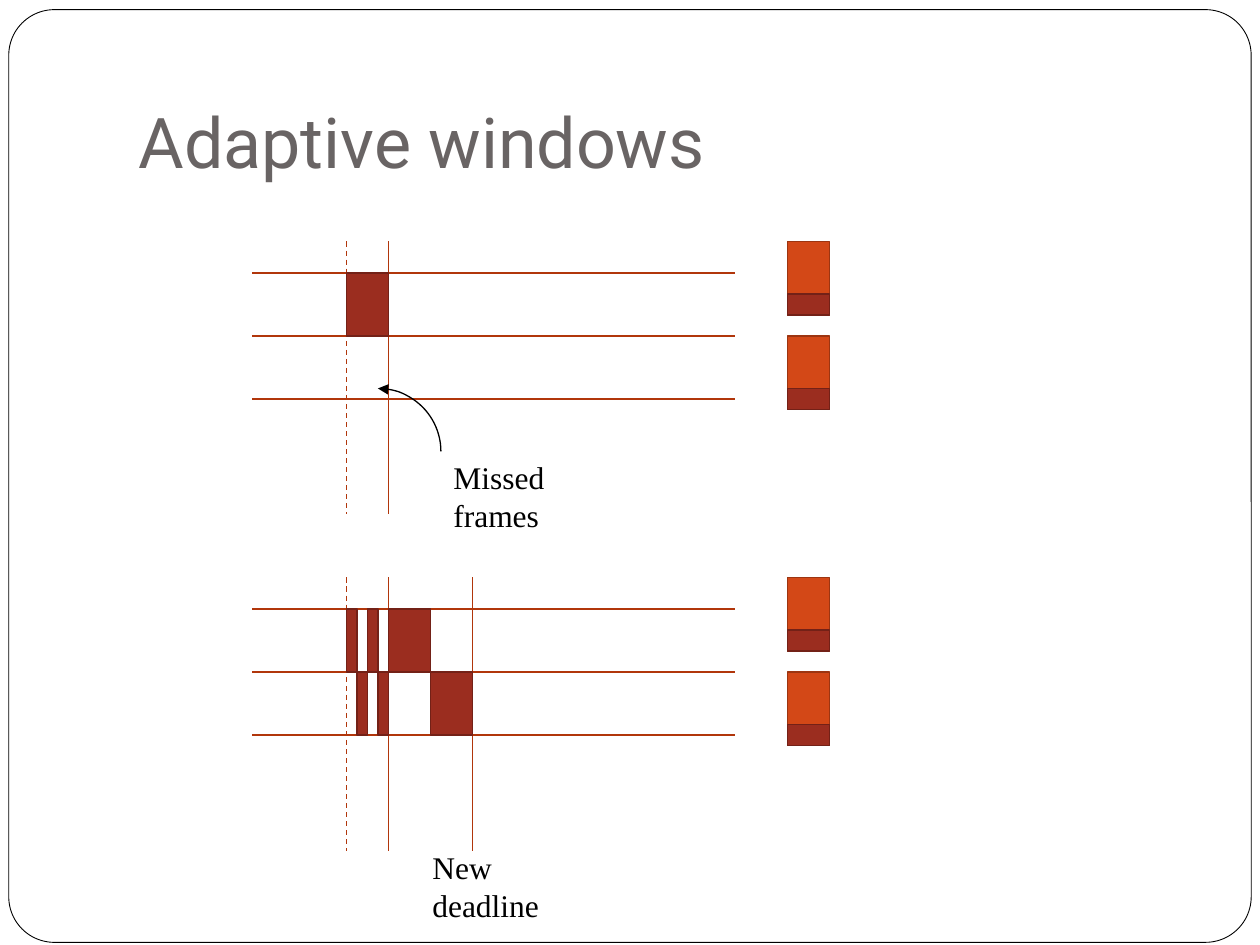
from lxml import etree
from pptx import Presentation
from pptx.dml.color import RGBColor
from pptx.enum import dml, shapes, text
from pptx.oxml import ns
from pptx.util import Pt

COLORS = {
    "white": "FFFFFF", "black": "000000", "title": "696464", "grid": "B1360B",
    "buffer": "D34817", "buffer_edge": "9C3511",
    "frame": "9B2D1F", "frame_edge": "732117",
}
ROW_TOPS = (18, 54, 90)
ROW_HEIGHT = 36
WINDOW_START, DEADLINE, NEW_DEADLINE = 54, 78, 126
PANEL_WIDTH, PANEL_HEIGHT = 276, 156


def color(name):
    return RGBColor.from_string(COLORS[name])


def style_line(shape, name, width):
    shape.line.color.rgb = color(name)
    shape.line.width = Pt(width)


def add_box(slide, left, top, width, height, fill, edge, edge_width=1,
            kind=shapes.MSO_SHAPE.RECTANGLE):
    box = slide.shapes.add_shape(kind, Pt(left), Pt(top), Pt(width), Pt(height))
    box.shadow.inherit = False
    box.fill.solid()
    box.fill.fore_color.rgb = color(fill)
    style_line(box, edge, edge_width)
    return box


def add_line(slide, x1, y1, x2, y2, dashed=False):
    line = slide.shapes.add_connector(
        shapes.MSO_CONNECTOR.STRAIGHT, Pt(x1), Pt(y1), Pt(x2), Pt(y2))
    style_line(line, "grid", 0.75)
    if dashed:
        line.line.dash_style = dml.MSO_LINE.DASH
    etree.SubElement(line._element.spPr, ns.qn("a:effectLst"))


def add_label(slide, left, top, width, words):
    label = slide.shapes.add_textbox(Pt(left), Pt(top), Pt(width), Pt(29))
    label.text_frame.word_wrap = True
    paragraph = label.text_frame.paragraphs[0]
    paragraph.text = words
    paragraph.font.name = "Times New Roman"
    paragraph.font.size = Pt(18)
    paragraph.font.color.rgb = color("black")


def add_border(slide):
    border = add_box(slide, 5, 5.5, 710, 533, "white", "black", 0.5,
                     shapes.MSO_SHAPE.ROUNDED_RECTANGLE)
    border.adjustments[0] = 0.049
    slide.shapes._spTree.insert(2, border._element)


def add_title(slide, left, top, width, height):
    title = slide.shapes.title
    title.left, title.top = Pt(left), Pt(top)
    title.width, title.height = Pt(width), Pt(height)
    frame = title.text_frame
    frame.vertical_anchor = text.MSO_ANCHOR.BOTTOM
    frame.margin_bottom = Pt(7.2)
    paragraph = frame.paragraphs[0]
    paragraph.text = "Adaptive windows"
    paragraph.alignment = text.PP_ALIGN.LEFT
    paragraph.font.name = "Roboto"
    paragraph.font.size = Pt(40)
    paragraph.font.color.rgb = color("title")


def add_buffers(slide, left, top):
    """Two stacked buffers, each with a filled part at its foot."""
    for y in (top, top + 54):
        add_box(slide, left, y, 24, 42, "buffer", "buffer_edge")
        add_box(slide, left, y + 30, 24, 12, "frame", "frame_edge")


def add_timeline(slide, left, top, deadlines, frames):
    """Two-row schedule; frames are (row, start, width) from the window start."""
    for y in ROW_TOPS:
        add_line(slide, left, top + y, left + PANEL_WIDTH, top + y)
    for x in (WINDOW_START, *deadlines):
        add_line(slide, left + x, top, left + x, top + PANEL_HEIGHT,
                 dashed=x == WINDOW_START)
    for row, start, width in frames:
        add_box(slide, left + WINDOW_START + start, top + ROW_TOPS[row],
                width, ROW_HEIGHT, "frame", "frame_edge")
    add_buffers(slide, left + 306, top)


def add_missed_arrow(slide, left, top, size):
    arc = slide.shapes.add_shape(
        shapes.MSO_SHAPE.ARC, Pt(left), Pt(top), Pt(size), Pt(size))
    arc.shadow.inherit = False
    arc.fill.background()
    style_line(arc, "black", 0.75)
    etree.SubElement(arc.line._get_or_add_ln(), ns.qn("a:headEnd"), type="triangle")


def main():
    presentation = Presentation()
    presentation.slide_width, presentation.slide_height = Pt(720), Pt(540)
    slide = presentation.slides.add_slide(presentation.slide_layouts[5])
    add_border(slide)
    add_title(slide, 72, 21.6, 612, 90)

    add_timeline(slide, 144, 138, [DEADLINE], [(0, 0, 24)])
    add_missed_arrow(slide, 180, 222, 72)
    add_label(slide, 252, 258, 107, "Missed frames")

    short_frames = [(i % 2, 6 * i, 6) for i in range(4)]
    add_timeline(slide, 144, 330, [DEADLINE, NEW_DEADLINE],
                 short_frames + [(0, 24, 24), (1, 48, 24)])
    add_label(slide, 240, 481, 105, "New deadline")
    presentation.save("out.pptx")


if __name__ == "__main__":
    main()
